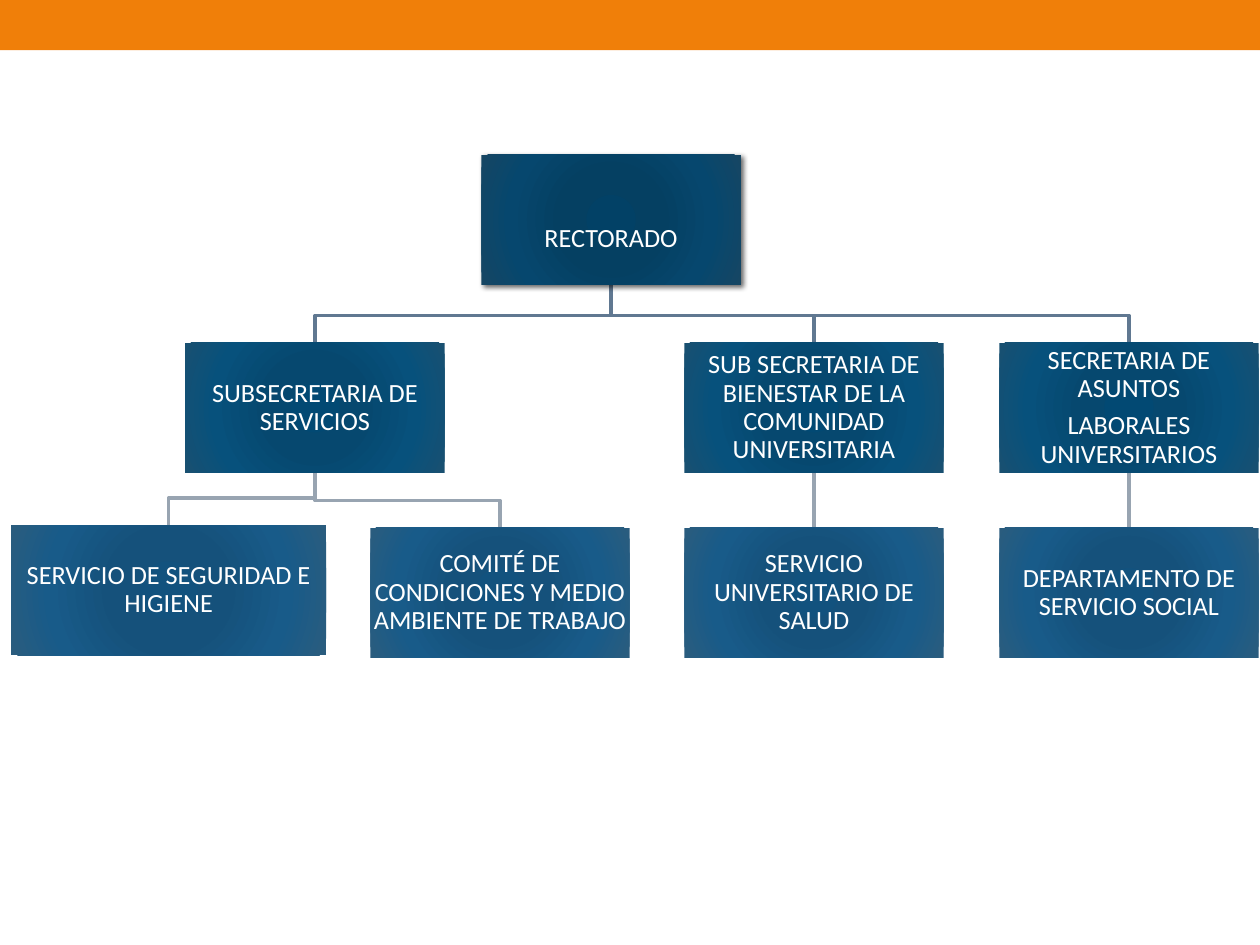
import lxml.etree
import pptx
import pptx.dml.color
import pptx.enum.shapes
import pptx.enum.text
import pptx.oxml
import pptx.oxml.ns
import pptx.util

Cm = pptx.util.Cm
Pt = pptx.util.Pt

COLORS = {
    "band": "F07F09",
    "text": "FFFFFF",
    "shadow": "000000",
    "upper_link": "607891",
    "lower_link": "98A4B1",
}
GRADIENTS = {
    "rector": ("024166", "054062", "06476E", "164663"),
    "secretary": ("024973", "06486F", "07517C", "195071"),
    "service": ("12527E", "15517B", "185B89", "2A5C7E"),
}
GRADIENT_STOPS = (0, 34, 70, 100)

BOX_WIDTH, BOX_HEIGHT = 5.23, 2.62
BEND_RISE = 0.55  # from the top of a box up to the bend of its link
FRAME_FORMAT = {
    "word_wrap": True,
    "vertical_anchor": pptx.enum.text.MSO_ANCHOR.MIDDLE,
    "margin_left": Cm(0.03),
    "margin_right": Cm(0.03),
    "margin_top": Cm(0.03),
    "margin_bottom": Cm(0.03),
}
PARAGRAPH_FORMAT = {
    "alignment": pptx.enum.text.PP_ALIGN.CENTER,
    "line_spacing": 0.9,
    "space_after": Pt(5.25),
}
FONT_FORMAT = {"name": "Calibri", "size": Pt(15)}

# key: (parent, level, centre, top, width, paragraphs)
UNITS = {
    "rector": (None, "rector", 12.32, 3.12, BOX_WIDTH, ["RECTORADO"]),
    "services": ("rector", "secretary", 6.35, 6.91, BOX_WIDTH,
                 ["SUBSECRETARIA DE SERVICIOS"]),
    "safety": ("services", "service", 3.4, 10.59, 6.35,
               ["SERVICIO DE SEGURIDAD E HIGIENE"]),
    "committee": ("services", "service", 10.08, 10.64, BOX_WIDTH,
                  ["COMITÉ DE CONDICIONES Y MEDIO AMBIENTE DE TRABAJO"]),
    "welfare": ("rector", "secretary", 16.41, 6.91, BOX_WIDTH,
                ["SUB SECRETARIA DE BIENESTAR DE LA COMUNIDAD UNIVERSITARIA"]),
    "health": ("welfare", "service", 16.41, 10.64, BOX_WIDTH,
               ["SERVICIO UNIVERSITARIO DE SALUD"]),
    "labour": ("rector", "secretary", 22.76, 6.91, BOX_WIDTH,
               ["SECRETARIA DE ASUNTOS", "LABORALES UNIVERSITARIOS"]),
    "social": ("labour", "service", 22.76, 10.64, BOX_WIDTH,
               ["DEPARTAMENTO DE SERVICIO SOCIAL"]),
}


def apply_format(target, values):
    for name, value in values.items():
        setattr(target, name, value)


def rgb(name):
    return pptx.dml.color.RGBColor.from_string(COLORS[name])


def add_rectangle(slide, left, top, width, height):
    box = slide.shapes.add_shape(
        pptx.enum.shapes.MSO_SHAPE.RECTANGLE,
        Cm(left), Cm(top), Cm(width), Cm(height))
    box.shadow.inherit = False
    box.line.fill.background()
    return box


def set_radial_fill(box, level):
    stops = "".join(
        f'<a:gs pos="{stop * 1000}"><a:srgbClr val="{color}"/></a:gs>'
        for stop, color in zip(GRADIENT_STOPS, GRADIENTS[level]))
    gradient = pptx.oxml.parse_xml(
        f'<a:gradFill {pptx.oxml.ns.nsdecls("a")} rotWithShape="1">'
        f'<a:gsLst>{stops}</a:gsLst><a:path path="circle">'
        '<a:fillToRect l="100000" t="100000" r="100000" b="100000"/>'
        '</a:path></a:gradFill>')
    geometry = box.element.spPr.find(pptx.oxml.ns.qn("a:prstGeom"))
    geometry.addnext(gradient)


def add_shadow(box):
    effects = box.element.spPr.find(pptx.oxml.ns.qn("a:effectLst"))
    effects.append(pptx.oxml.parse_xml(
        f'<a:outerShdw {pptx.oxml.ns.nsdecls("a")} blurRad="{Pt(3)}" '
        f'dist="{Pt(2)}" dir="2700000" algn="tl" rotWithShape="0">'
        f'<a:srgbClr val="{COLORS["shadow"]}"><a:alpha val="60000"/>'
        '</a:srgbClr></a:outerShdw>'))


def write_text(box, texts):
    frame = box.text_frame
    apply_format(frame, FRAME_FORMAT)
    for index, text in enumerate(texts):
        para = frame.add_paragraph() if index else frame.paragraphs[0]
        apply_format(para, PARAGRAPH_FORMAT)
        span = para.add_run()
        span.text = text
        apply_format(span.font, FONT_FORMAT)
        span.font.color.rgb = rgb("text")


def add_unit(slide, unit):
    parent, level, centre, top, width, texts = unit
    box = add_rectangle(slide, centre - width / 2, top, width, BOX_HEIGHT)
    set_radial_fill(box, level)
    write_text(box, texts)
    if parent is None:
        add_shadow(box)
        box.text_frame.margin_top = Cm(0.8)


def add_link(slide, parent, child):
    """Join two units, straight when aligned and with a bend otherwise."""
    start_x, start_y = Cm(parent[2]), Cm(parent[3] + BOX_HEIGHT)
    end_x, end_y = Cm(child[2]), Cm(child[3])
    if start_x == end_x:
        link = slide.shapes.add_connector(
            pptx.enum.shapes.MSO_CONNECTOR.STRAIGHT,
            start_x, start_y, end_x, end_y)
        lxml.etree.SubElement(
            link.element.spPr, pptx.oxml.ns.qn("a:effectLst"))
    else:
        bend_y = Cm(child[3] - BEND_RISE)
        builder = slide.shapes.build_freeform(start_x, start_y)
        builder.add_line_segments(
            [(start_x, bend_y), (end_x, bend_y), (end_x, end_y)], close=False)
        link = builder.convert_to_shape()
        link.fill.background()
        link.shadow.inherit = False
    link.line.width = Pt(2.08)
    link.line.color.rgb = rgb(
        "upper_link" if child[1] == "secretary" else "lower_link")


def main():
    deck = pptx.Presentation()
    deck.slide_width, deck.slide_height = Cm(25.4), Cm(19.05)
    page = deck.slides.add_slide(deck.slide_layouts[6])

    band = add_rectangle(page, 0, 0, 25.4, 1.01)
    band.fill.solid()
    band.fill.fore_color.rgb = rgb("band")

    for unit in UNITS.values():
        if unit[0]:
            add_link(page, UNITS[unit[0]], unit)
    for unit in UNITS.values():
        add_unit(page, unit)
    deck.save("out.pptx")


if __name__ == "__main__":
    main()
